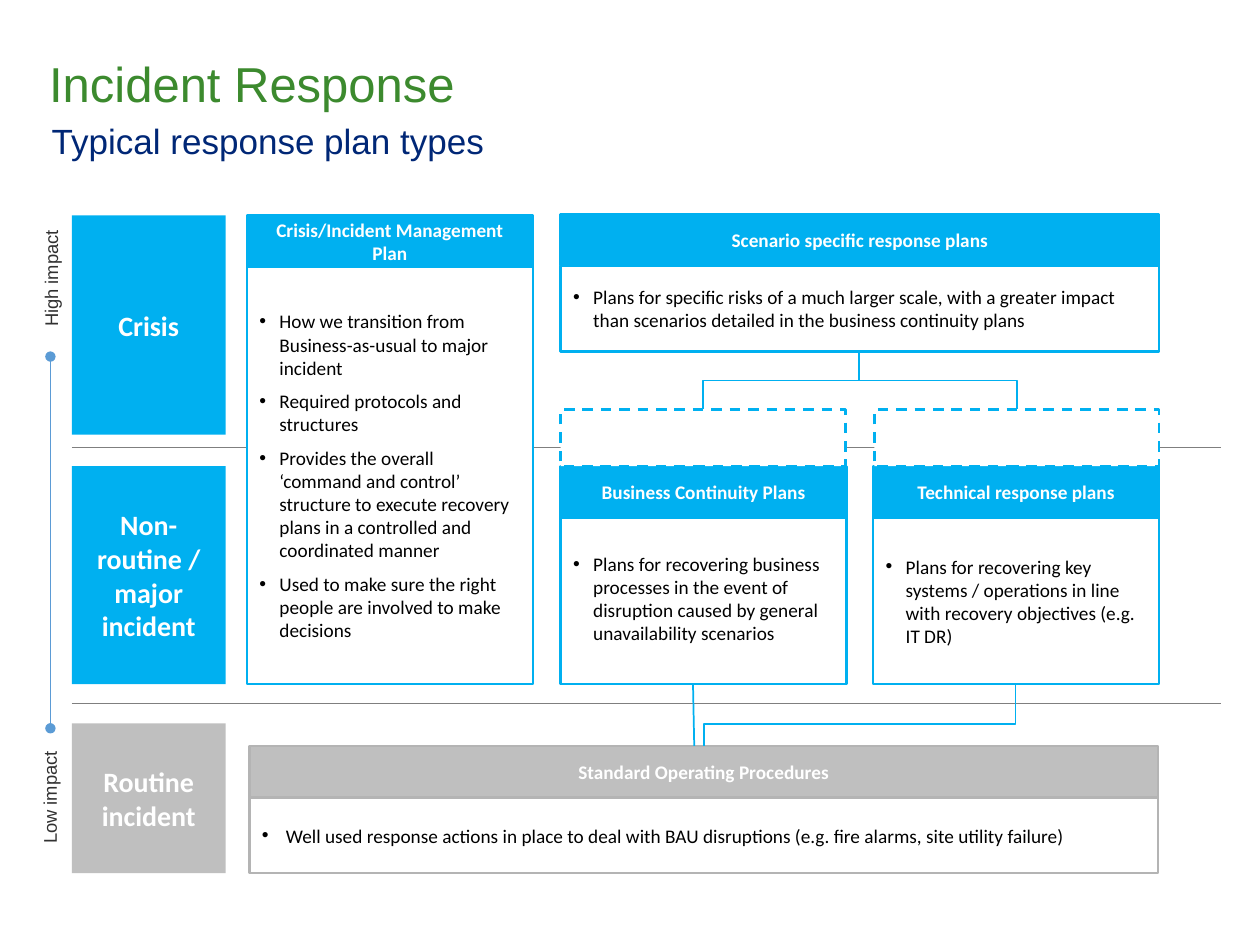
from dataclasses import dataclass

from pptx import Presentation
from pptx.dml.color import RGBColor
from pptx.enum.dml import MSO_LINE_DASH_STYLE as Dash
from pptx.enum.shapes import MSO_CONNECTOR as Link, MSO_SHAPE as Shape
from pptx.enum.text import MSO_ANCHOR as Anchor, MSO_AUTO_SIZE as AutoSize, PP_ALIGN as Align
from pptx.oxml.ns import qn
from pptx.util import Emu, Inches, Pt
from lxml.etree import SubElement

BLUE = RGBColor(0x00, 0xB0, 0xF0)
GREY = RGBColor(0xBF, 0xBF, 0xBF)
GREY_EDGE = RGBColor(0xB4, 0xB4, 0xB4)
SCALE_BLUE = RGBColor(0x5B, 0x9B, 0xD5)
RULE_GREY = RGBColor(0x7F, 0x7F, 0x7F)
GREEN = RGBColor(0x3C, 0x8A, 0x2E)
NAVY = RGBColor(0x00, 0x27, 0x76)
CHARCOAL = RGBColor(0x31, 0x31, 0x31)
WHITE = RGBColor(0xFF, 0xFF, 0xFF)
BLACK = RGBColor(0, 0, 0)

# The page is a grid of 100 columns by 75 rows
deck = Presentation()
deck.slide_width, deck.slide_height = Inches(10), Inches(7.5)
COLUMN, ROW = deck.slide_width / 100, deck.slide_height / 75
page = deck.slides.add_slide(deck.slide_layouts[1])

HEADER_ROWS = 4.1
LEVEL_LEFT, LEVEL_WIDTH = 5.7, 12.2
MANAGEMENT, CONTINUITY, TECHNICAL = 19.6, 44.5, 69.3
PLAN_WIDTH = 22.7
CRISIS_TOP, MAJOR_TOP, MAJOR_BOTTOM = 17.1, 37, 54.3
ROUTINE_TOP, ROUTINE_BOTTOM = 57.4, 69.3
SCENARIO_BOTTOM, DASHED_TOP, PROCEDURES_TOP = 27.9, 32.5, 59.2


@dataclass
class Level:
    label: str
    top: float
    bottom: float
    color: RGBColor = BLUE


@dataclass
class Panel:
    title: str
    bullets: list[str]
    left: float
    top: float
    width: float
    bottom: float
    fill: RGBColor = BLUE
    edge: RGBColor = BLUE
    indent: float = 0.16
    space_after: float = 5.3
    overlap: float = 0  # rows of the body hidden under the header


def cols(count: float) -> Emu:
    return Emu(round(count * COLUMN))


def rows(count: float) -> Emu:
    return Emu(round(count * ROW))


def style(para, font: str, size: float, color: RGBColor, bold: bool = False) -> None:
    for span in para.runs:
        span.font.name, span.font.size, span.font.bold = font, Pt(size), bold
        span.font.color.rgb = color


def set_margins(frame, left: float = 0, top: float = 0, right: float = 0, bottom: float = 0) -> None:
    frame.margin_left, frame.margin_top = Inches(left), Inches(top)
    frame.margin_right, frame.margin_bottom = Inches(right), Inches(bottom)


def place(shape, left: float, top: float, width: float, height: float) -> None:
    shape.left, shape.top, shape.width, shape.height = cols(left), rows(top), cols(width), rows(height)


def add_box(left: float, top: float, width: float, height: float, fill: RGBColor,
            edge: RGBColor | None = None):
    box = page.shapes.add_shape(Shape.RECTANGLE, cols(left), rows(top), cols(width), rows(height))
    box.shadow.inherit = False
    box.fill.solid()
    box.fill.fore_color.rgb = fill
    if edge is None:
        box.line.fill.background()
    else:
        box.line.color.rgb, box.line.width = edge, Pt(1.5)
    box.text_frame.word_wrap = True
    box.text_frame.vertical_anchor = Anchor.MIDDLE
    return box


def add_label(box, text: str, size: float) -> None:
    box.text_frame.text = text
    para = box.text_frame.paragraphs[0]
    para.alignment = Align.CENTER
    style(para, "Calibri", size, WHITE, bold=True)


def add_panel(panel: Panel) -> None:
    body_top = panel.top + HEADER_ROWS - panel.overlap
    body = add_box(panel.left, body_top, panel.width, panel.bottom - body_top, WHITE, panel.edge)
    body.text_frame.text = "\n".join(panel.bullets)
    for para in body.text_frame.paragraphs:
        para.alignment, para.space_after = Align.LEFT, Pt(panel.space_after)
        props = para._p.get_or_add_pPr()
        props.set("marL", str(Inches(panel.indent)))
        props.set("indent", str(-Inches(panel.indent)))
        SubElement(props, qn("a:buFont"), typeface="Arial")
        SubElement(props, qn("a:buChar"), char="•")
        style(para, "Calibri", 11, BLACK)
    header = add_box(panel.left, panel.top, panel.width, HEADER_ROWS, panel.fill, panel.edge)
    add_label(header, panel.title, 11)


def add_line(x1: float, y1: float, x2: float, y2: float, color: RGBColor, weight: float,
             kind=Link.STRAIGHT):
    line = page.shapes.add_connector(kind, cols(x1), rows(y1), cols(x2), rows(y2))
    line.line.color.rgb, line.line.width = color, Pt(weight)
    SubElement(line._element.spPr, qn("a:effectLst"))
    return line


def add_drop(x1: float, y1: float, x2: float, y2: float, bend: float = 0.5) -> None:
    """Elbow that leaves and arrives vertically: a level elbow turned a quarter."""
    middle_x, middle_y = (x1 + x2) / 2, (y1 + y2) / 2
    half_run, half_drop = abs(x2 - x1) / 2, (y2 - y1) / 2
    start, end = middle_x - half_drop, middle_x + half_drop
    to_right = x2 > x1
    if to_right:
        start, end = end, start
    elbow = add_line(start, middle_y - half_run, end, middle_y + half_run, BLUE, 1, Link.ELBOW)
    properties = elbow._element.spPr
    properties.find(qn("a:xfrm")).set("rot", str((270 if to_right else 90) * 60000))
    adjust = properties.find(qn("a:prstGeom")).find(qn("a:avLst"))
    SubElement(adjust, qn("a:gd"), name="adj1", fmla=f"val {round(bend * 100000)}")


def add_impact(text: str, left: float, top: float, width: float) -> None:
    box = page.shapes.add_textbox(cols(left), rows(top), cols(width), rows(1.8))
    box.rotation = 270
    frame = box.text_frame
    frame.word_wrap = True
    set_margins(frame)
    frame.text = text
    frame.paragraphs[0].alignment = Align.CENTER
    style(frame.paragraphs[0], "Arial", 10.5, CHARCOAL)


# Title and subtitle
title, subtitle = page.placeholders
place(title, 3.9, 3.8, 80.7, 5.1)
place(subtitle, 4.1, 9, 91.7, 3.4)
for holder, text, size, color, anchor in (
        (title, "Incident Response", 28, GREEN, Anchor.BOTTOM),
        (subtitle, "Typical response plan types", 20, NAVY, Anchor.TOP)):
    frame = holder.text_frame
    frame.text = text
    frame.auto_size, frame.word_wrap, frame.vertical_anchor = AutoSize.NONE, True, anchor
    set_margins(frame)
    para = frame.paragraphs[0]
    para.alignment, para.space_before = Align.LEFT, Pt(0)
    style(para, "Arial", size, color)
set_margins(subtitle.text_frame, 0, 0.05, 0.1, 0.05)
subtitle_props = subtitle.text_frame.paragraphs[0]._p.get_or_add_pPr()
subtitle_props.set("marL", "0")
subtitle_props.set("indent", "0")
SubElement(subtitle_props, qn("a:buNone"))

# Dividers between the impact levels
for divider in (35.5, 55.8):
    add_line(LEVEL_LEFT, divider, 96.9, divider, RULE_GREY, 0.5)

# Impact levels
for level in (Level("Crisis", CRISIS_TOP, 34.5),
              Level("Non-routine / major incident", MAJOR_TOP, MAJOR_BOTTOM),
              Level("Routine incident", ROUTINE_TOP, ROUTINE_BOTTOM, GREY)):
    add_label(add_box(LEVEL_LEFT, level.top, LEVEL_WIDTH, level.bottom - level.top, level.color),
              level.label, 16)

# Plans
for plan in (
        Panel("Standard Operating Procedures",
              ["Well used response actions in place to deal with BAU disruptions "
               "(e.g. fire alarms, site utility failure)"],
              19.8, PROCEDURES_TOP, 72.1, ROUTINE_BOTTOM, GREY, GREY_EDGE, indent=0.19),
        Panel("Crisis/Incident Management Plan",
              ["How we transition from Business-as-usual to major incident",
               "Required protocols and structures",
               "Provides the overall ‘command and control’ structure to execute recovery "
               "plans in a controlled and coordinated manner",
               "Used to make sure the right people are involved to make decisions"],
              MANAGEMENT, CRISIS_TOP, PLAN_WIDTH, MAJOR_BOTTOM, space_after=6),
        Panel("Business Continuity Plans",
              ["Plans for recovering business processes in the event of disruption caused "
               "by general unavailability scenarios"],
              CONTINUITY, MAJOR_TOP, PLAN_WIDTH, MAJOR_BOTTOM, overlap=0.4),
        Panel("Scenario specific response plans",
              ["Plans for specific risks of a much larger scale, with a greater impact than "
               "scenarios detailed in the business continuity plans"],
              CONTINUITY, 17, 47.5, SCENARIO_BOTTOM),
        Panel("Technical response plans",
              ["Plans for recovering key systems / operations in line with recovery "
               "objectives (e.g. IT DR)"],
              TECHNICAL, MAJOR_TOP, PLAN_WIDTH, MAJOR_BOTTOM)):
    add_panel(plan)

# Links between plans
add_drop(68.2, SCENARIO_BOTTOM, 55.8, DASHED_TOP)
add_drop(68.2, SCENARIO_BOTTOM, 80.7, DASHED_TOP)
add_line(55, MAJOR_BOTTOM, 55.1, PROCEDURES_TOP, BLUE, 1)
add_drop(80.6, MAJOR_BOTTOM, 55.9, PROCEDURES_TOP, bend=0.65)

# Dashed extensions into the crisis level
for left in (CONTINUITY, TECHNICAL + 0.1):
    extension = add_box(left, DASHED_TOP, 22.6, MAJOR_TOP - DASHED_TOP, WHITE, BLUE)
    extension.line.dash_style = Dash.DASH

# Impact scale
add_impact("Low impact", -0.3, 62.4, 8.5)
add_impact("High impact", -0.9, 21.2, 9.9)
scale = add_line(4, 28.3, 4, 57.8, SCALE_BLUE, 0.5)
for tip in ("a:headEnd", "a:tailEnd"):
    SubElement(scale.line._get_or_add_ln(), qn(tip), type="oval")

deck.save("out.pptx")
